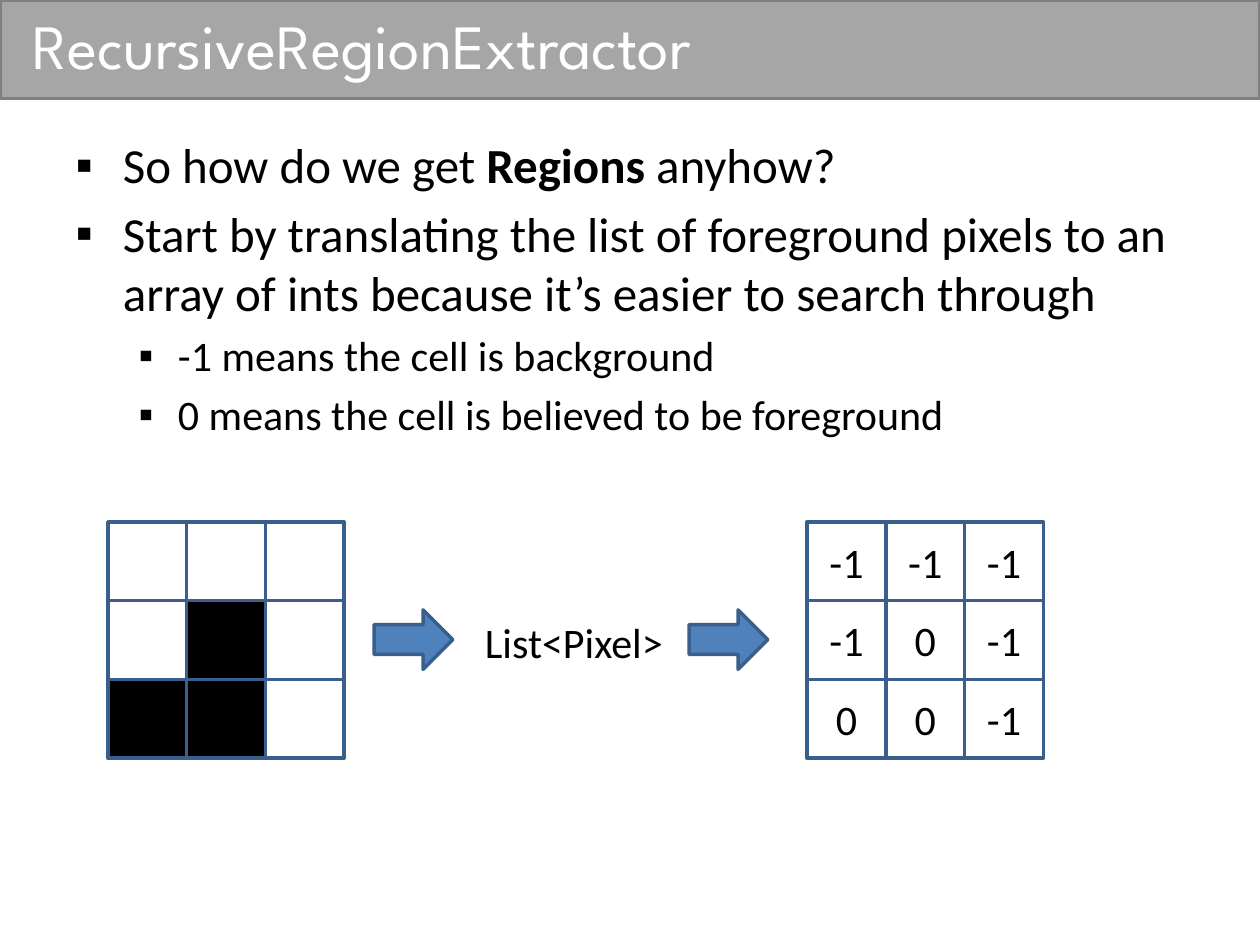
from dataclasses import dataclass
from lxml.etree import SubElement
from pptx import Presentation
from pptx.dml.color import RGBColor
from pptx.enum.shapes import MSO_SHAPE
from pptx.enum.text import MSO_ANCHOR, MSO_AUTO_SIZE, PP_ALIGN
from pptx.oxml.ns import qn
from pptx.util import Pt


@dataclass
class Theme:
    heading: str = "League Spartan"
    text: str = "Calibri"
    title_size: int = 36
    body_size: int = 28
    small_size: int = 24
    black: str = "000000"
    white: str = "FFFFFF"
    bar: str = "A6A6A6"
    bar_line: str = "808080"
    arrow: str = "4F81BD"
    outline: str = "3A5F8C"


theme = Theme()


def add_box(kind, x, y, w, h, fill, line):
    sp = s.shapes.add_shape(kind, Pt(x), Pt(y), Pt(w), Pt(h))
    sp.shadow.inherit = False
    if fill:
        sp.fill.solid()
        sp.fill.fore_color.rgb = RGBColor.from_string(fill)
    else:
        sp.fill.background()
    sp.line.color.rgb = RGBColor.from_string(line)
    sp.line.width = Pt(2)
    return sp


def style(p, size, color=theme.black, font=theme.text):
    for r in p.runs:
        r.font.name = font
        r.font.size = Pt(size)
        r.font.color.rgb = RGBColor.from_string(color)


prs = Presentation()
prs.slide_width, prs.slide_height = Pt(720), Pt(540)
s = prs.slides.add_slide(prs.slide_layouts[1])

bar = add_box(MSO_SHAPE.RECTANGLE, 0, 0, 720, 56.25, theme.bar, theme.bar_line)
s.shapes._spTree.insert(2, bar._element)

title = s.shapes.title
title.left, title.top, title.width, title.height = Pt(11.5), Pt(0), Pt(686), Pt(50.4)
tf = title.text_frame
tf.text = "RecursiveRegionExtractor"
tf.auto_size = MSO_AUTO_SIZE.NONE
tf.vertical_anchor = MSO_ANCHOR.MIDDLE
p = tf.paragraphs[0]
p.alignment = PP_ALIGN.LEFT
style(p, theme.title_size, theme.white, theme.heading)

body = s.placeholders[1]
body.left, body.top, body.width, body.height = Pt(36), Pt(73.5), Pt(648), Pt(433.5)
tf = body.text_frame
tf.auto_size = MSO_AUTO_SIZE.NONE
bullets = [
    (0, ["So how do we get ", "Regions", " anyhow?"]),
    (0, ["Start by translating the list of foreground pixels to an array of ints "
         "because it’s easier to search through"]),
    (1, ["-1 means the cell is background"]),
    (1, ["0 means the cell is believed to be foreground"]),
]
levels = [(theme.body_size, 27, -27), (theme.small_size, 58.5, -22.5)]
for i, (level, parts) in enumerate(bullets):
    p = tf.add_paragraph() if i else tf.paragraphs[0]
    size, margin, indent = levels[level]
    p.level = level
    p.space_before = Pt(0.2 * size)
    for part in parts:
        r = p.add_run()
        r.text = part
        r.font.bold = part == "Regions"
    style(p, size)
    pPr = p._p.get_or_add_pPr()
    pPr.set("marL", str(Pt(margin)))
    pPr.set("indent", str(Pt(indent)))
    SubElement(pPr, qn("a:buFont"), typeface="Arial")
    SubElement(pPr, qn("a:buChar"), char="▪")

cell = 45
grid_top = 298.25
pixels_left, labels_left = 61.7, 461.25
labels = [["-1", "-1", "-1"], ["-1", "0", "-1"], ["0", "0", "-1"]]
for row, values in enumerate(labels):
    for col, value in enumerate(values):
        y = grid_top + row * cell
        fill = theme.black if value == "0" else theme.white
        add_box(MSO_SHAPE.RECTANGLE, pixels_left + col * cell, y, cell, cell, fill, theme.outline)
        sp = add_box(MSO_SHAPE.RECTANGLE, labels_left + col * cell, y, cell, cell, None, theme.outline)
        tf = sp.text_frame
        tf.text = value
        tf.vertical_anchor = MSO_ANCHOR.MIDDLE
        p = tf.paragraphs[0]
        p.alignment = PP_ALIGN.CENTER
        style(p, theme.small_size)

tb = s.shapes.add_textbox(Pt(270), Pt(348.5), Pt(117), Pt(36))
tf = tb.text_frame
tf.text = "List<Pixel>"
tf.word_wrap = False
tf.auto_size = MSO_AUTO_SIZE.SHAPE_TO_FIT_TEXT
style(tf.paragraphs[0], theme.small_size)

for x in (213.75, 393.75):
    add_box(MSO_SHAPE.RIGHT_ARROW, x, 348.5, 45, 34, theme.arrow, theme.outline)

prs.save("out.pptx")
